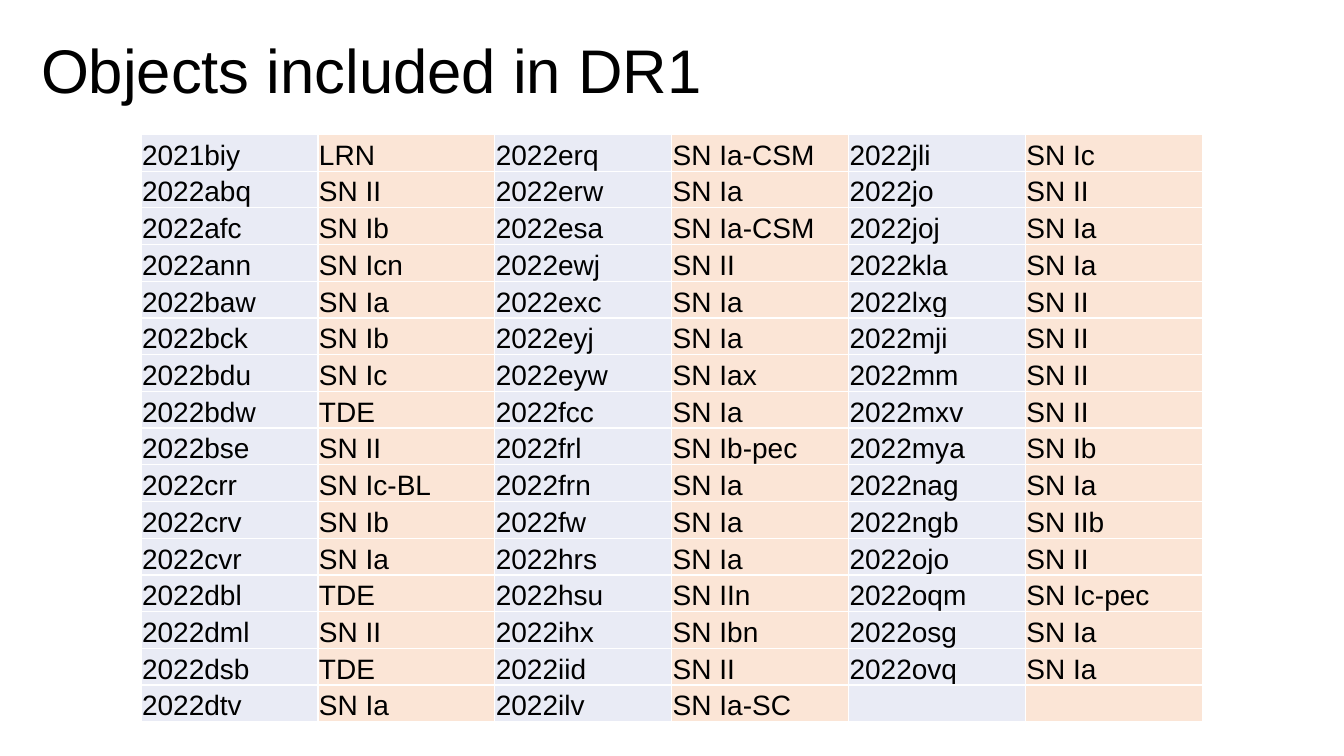
from lxml.etree import SubElement
from pptx import Presentation
from pptx.dml.color import RGBColor as Color
from pptx.enum.text import MSO_ANCHOR as Anchor
from pptx.oxml.ns import qn
from pptx.util import Pt

# Content: each group fills a name column and a type column
TITLE = "Objects included in DR1"
GROUPS = [
    [("2021biy", "LRN"), ("2022abq", "SN II"), ("2022afc", "SN Ib"),
     ("2022ann", "SN Icn"), ("2022baw", "SN Ia"), ("2022bck", "SN Ib"),
     ("2022bdu", "SN Ic"), ("2022bdw", "TDE"), ("2022bse", "SN II"),
     ("2022crr", "SN Ic-BL"), ("2022crv", "SN Ib"), ("2022cvr", "SN Ia"),
     ("2022dbl", "TDE"), ("2022dml", "SN II"), ("2022dsb", "TDE"),
     ("2022dtv", "SN Ia")],
    [("2022erq", "SN Ia-CSM"), ("2022erw", "SN Ia"), ("2022esa", "SN Ia-CSM"),
     ("2022ewj", "SN II"), ("2022exc", "SN Ia"), ("2022eyj", "SN Ia"),
     ("2022eyw", "SN Iax"), ("2022fcc", "SN Ia"), ("2022frl", "SN Ib-pec"),
     ("2022frn", "SN Ia"), ("2022fw", "SN Ia"), ("2022hrs", "SN Ia"),
     ("2022hsu", "SN IIn"), ("2022ihx", "SN Ibn"), ("2022iid", "SN II"),
     ("2022ilv", "SN Ia-SC")],
    [("2022jli", "SN Ic"), ("2022jo", "SN II"), ("2022joj", "SN Ia"),
     ("2022kla", "SN Ia"), ("2022lxg", "SN II"), ("2022mji", "SN II"),
     ("2022mm", "SN II"), ("2022mxv", "SN II"), ("2022mya", "SN Ib"),
     ("2022nag", "SN Ia"), ("2022ngb", "SN IIb"), ("2022ojo", "SN II"),
     ("2022oqm", "SN Ic-pec"), ("2022osg", "SN Ia"), ("2022ovq", "SN Ia")],
]

THEME = {
    "font": "Arial", "text": "000000", "border": "FFFFFF",
    "fills": ("E9EBF5", "FBE5D6"),  # name column, type column
    "title_size": 44, "cell_size": 20, "border_width": 1,
}

# Layout in points
PAGE_WIDTH, PAGE_HEIGHT = 960, 540
TITLE_BOX = (22.3, 0, 828, 104.4)
TABLE_LEFT, TABLE_TOP = 100.8, 96
COLUMN_WIDTH, ROW_HEIGHT = 126.36, 26.24
CELL_INSET = 0.7


def style_text(para, size):
    for span in para.runs:
        span.font.name = THEME["font"]
        span.font.size = Pt(size)
        span.font.color.rgb = Color.from_string(THEME["text"])


def add_borders(cell):
    properties = cell._tc.get_or_add_tcPr()
    for position, side in enumerate(("lnL", "lnR", "lnT", "lnB")):
        line = SubElement(properties, qn(f"a:{side}"), w=str(Pt(THEME["border_width"])))
        fill = SubElement(line, qn("a:solidFill"))
        SubElement(fill, qn("a:srgbClr"), val=THEME["border"])
        properties.insert(position, line)  # borders come before the cell fill


def style_cell(cell, text, color):
    cell.text_frame.text = text
    style_text(cell.text_frame.paragraphs[0], THEME["cell_size"])
    cell.vertical_anchor = Anchor.BOTTOM
    cell.margin_left = cell.margin_right = cell.margin_top = Pt(CELL_INSET)
    cell.margin_bottom = Pt(0)
    cell.fill.solid()
    cell.fill.fore_color.rgb = Color.from_string(color)
    add_borders(cell)


def add_title(page):
    box = page.shapes.add_textbox(*map(Pt, TITLE_BOX))
    frame = box.text_frame
    frame.word_wrap = True
    frame.vertical_anchor = Anchor.MIDDLE
    frame.text = TITLE
    para = frame.paragraphs[0]
    para.line_spacing = 0.9
    style_text(para, THEME["title_size"])


def add_object_table(page):
    row_count = max(len(group) for group in GROUPS)
    column_count = 2 * len(GROUPS)
    table = page.shapes.add_table(
        row_count, column_count, Pt(TABLE_LEFT), Pt(TABLE_TOP),
        Pt(column_count * COLUMN_WIDTH), Pt(row_count * ROW_HEIGHT)).table
    table.first_row = table.horz_banding = False
    for column in table.columns:
        column.width = Pt(COLUMN_WIDTH)
    for row in table.rows:
        row.height = Pt(ROW_HEIGHT)

    # Short groups leave their last cells empty
    for group_index, group in enumerate(GROUPS):
        padded = group + [("", "")] * (row_count - len(group))
        for row_index, pair in enumerate(padded):
            for offset, (text, color) in enumerate(zip(pair, THEME["fills"])):
                style_cell(table.cell(row_index, 2 * group_index + offset), text, color)


def main():
    deck = Presentation()
    deck.slide_width, deck.slide_height = Pt(PAGE_WIDTH), Pt(PAGE_HEIGHT)
    page = deck.slides.add_slide(deck.slide_layouts[6])
    add_title(page)
    add_object_table(page)
    deck.save("out.pptx")


if __name__ == "__main__":
    main()
